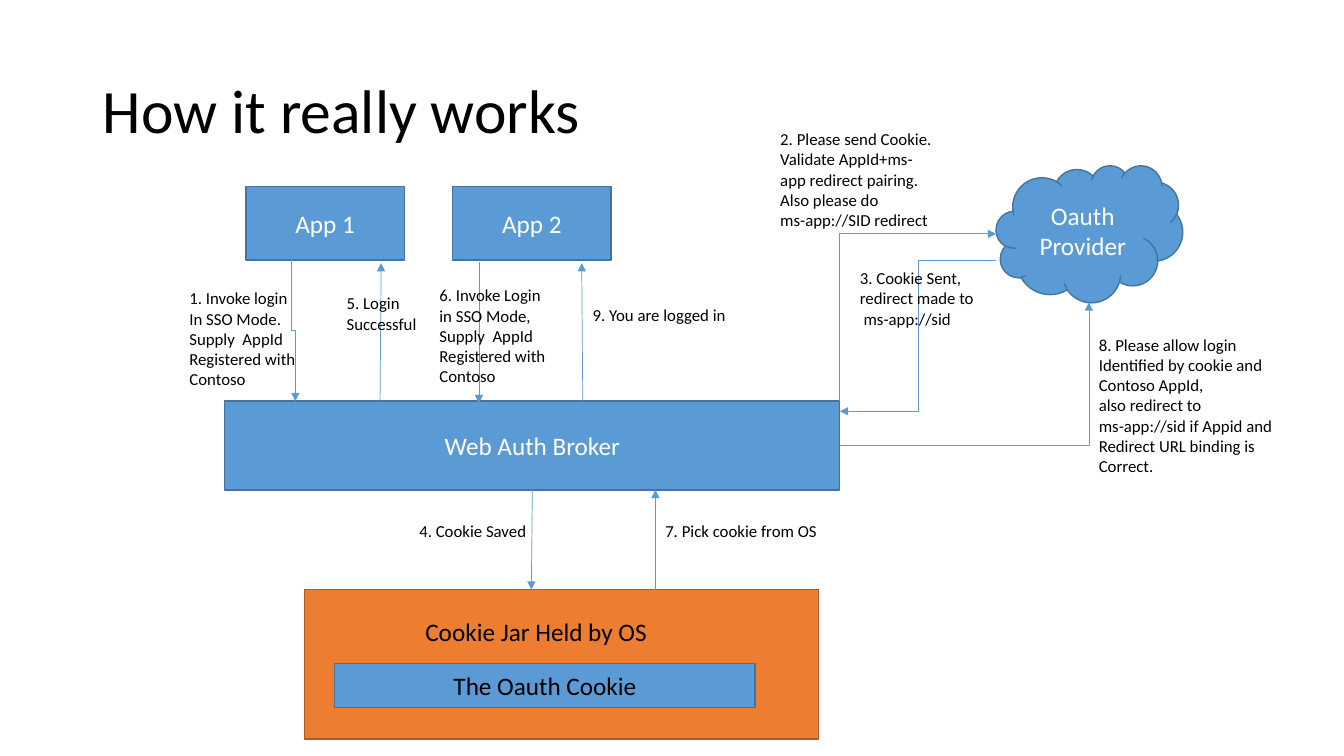
from pptx import Presentation
from pptx.dml.color import RGBColor
from pptx.enum.shapes import MSO_CONNECTOR, MSO_SHAPE
from pptx.enum.text import MSO_ANCHOR, MSO_AUTO_SIZE, PP_ALIGN
from pptx.oxml.ns import qn
from pptx.util import Inches, Pt
from lxml import etree

RECTANGLE, CLOUD = MSO_SHAPE.RECTANGLE, MSO_SHAPE.CLOUD
STRAIGHT, ELBOW = MSO_CONNECTOR.STRAIGHT, MSO_CONNECTOR.ELBOW
MIDDLE, TOP = MSO_ANCHOR.MIDDLE, MSO_ANCHOR.TOP
LEFT, CENTER = PP_ALIGN.LEFT, PP_ALIGN.CENTER
FIT_SHAPE, NO_FIT = MSO_AUTO_SIZE.SHAPE_TO_FIT_TEXT, MSO_AUTO_SIZE.NONE

BLACK = RGBColor(0x00, 0x00, 0x00)
WHITE = RGBColor(0xFF, 0xFF, 0xFF)
BLUE = RGBColor(0x5B, 0x9B, 0xD5)
DARK_BLUE = RGBColor(0x43, 0x73, 0x9E)
ORANGE = RGBColor(0xED, 0x7D, 0x31)
DARK_ORANGE = RGBColor(0xAF, 0x5C, 0x24)
FONT = "Calibri"

APP_TOP, APP_WIDTH, APP_HEIGHT = 1.85, 1.57, 0.73
BROKER_LEFT, BROKER_TOP, BROKER_WIDTH, BROKER_HEIGHT = 2.23, 3.98, 6.1, 0.88
BROKER_RIGHT = BROKER_LEFT + BROKER_WIDTH
BROKER_BOTTOM = BROKER_TOP + BROKER_HEIGHT
JAR_TOP = 5.85
CLOUD_LEFT, CLOUD_BOTTOM = 9.88, 3.0

STEPS = [
    (1.78, 2.81, 1.3, 1.11, False,
     "1. Invoke login\nIn SSO Mode.\nSupply  AppId\nRegistered with\nContoso"),
    (7.64, 1.23, 1.71, 1.11, True,
     "2. Please send Cookie. Validate AppId+ms-app redirect pairing. "
     "Also please do\nms-app://SID redirect"),
    (8.43, 2.61, 1.34, 0.71, False,
     "3. Cookie Sent,\nredirect made to\n ms-app://sid"),
    (4.06, 5.12, 1.28, 0.3, False, "4. Cookie Saved"),
    (3.34, 2.86, 0.9, 0.5, False, "5. Login\nSuccessful"),
    (4.26, 2.78, 1.3, 1.31, False,
     "6. Invoke Login\nin SSO Mode,\nSupply  AppId\nRegistered with\nContoso"),
    (6.5, 5.12, 1.73, 0.3, False, "7. Pick cookie from OS"),
    (10.8, 3.27, 1.94, 1.51, False,
     "8. Please allow login\nIdentified by cookie and\nContoso AppId,\n"
     "also redirect to\nms-app://sid if Appid and\nRedirect URL binding is\nCorrect."),
    (5.78, 2.97, 1.54, 0.3, False, "9. You are logged in"),
]

STRAIGHT_ARROWS = [
    ((4.75, 2.6), (4.75, 4.0)),
    ((5.28, BROKER_BOTTOM), (5.27, JAR_TOP)),
    ((3.77, BROKER_TOP), (3.78, 2.61)),
    ((6.5, JAR_TOP), (6.5, BROKER_BOTTOM)),
    ((5.78, BROKER_TOP), (5.77, 2.61)),
]


def write_text(shape, text, size=18, color=BLACK, align=LEFT, anchor=TOP,
               wrap=True, fit=NO_FIT, spacing=1.0):
    frame = shape.text_frame
    frame.text = text
    frame.word_wrap = wrap
    frame.auto_size = fit
    frame.vertical_anchor = anchor
    for paragraph in frame.paragraphs:
        paragraph.alignment = align
        paragraph.line_spacing = spacing
        paragraph.font.name = FONT
        paragraph.font.size = Pt(size)
        paragraph.font.color.rgb = color


def add_title(slide, text):
    title = slide.shapes.title
    title.left, title.top = Inches(0.92), Inches(0.4)
    title.width, title.height = Inches(11.5), Inches(1.45)
    write_text(title, text, size=44, anchor=MIDDLE, spacing=0.9)


def add_box(slide, left, top, width, height, text="", kind=RECTANGLE,
            fill=BLUE, line=DARK_BLUE, color=WHITE):
    shape = slide.shapes.add_shape(
        kind, Inches(left), Inches(top), Inches(width), Inches(height))
    shape.shadow.inherit = False
    shape.fill.solid()
    shape.fill.fore_color.rgb = fill
    shape.line.color.rgb = line
    shape.line.width = Pt(1)
    if text:
        write_text(shape, text, color=color, align=CENTER, anchor=MIDDLE)


def add_label(slide, left, top, width, height, text, size=12, wrap=False):
    label = slide.shapes.add_textbox(
        Inches(left), Inches(top), Inches(width), Inches(height))
    write_text(label, text, size=size, wrap=wrap, fit=FIT_SHAPE)


def add_arrow(slide, start, end, kind=STRAIGHT, arrow_end="tailEnd"):
    connector = slide.shapes.add_connector(
        kind, *(Inches(value) for value in (*start, *end)))
    connector.line.color.rgb = BLUE
    connector.line.width = Pt(0.5)
    properties = connector._element.spPr
    etree.SubElement(properties.find(qn("a:ln")), qn("a:" + arrow_end), type="triangle")
    etree.SubElement(properties, qn("a:effectLst"))
    return connector


def add_corner_arrow(slide, start, end, arrow_end="tailEnd"):
    connector = add_arrow(slide, start, end, ELBOW, arrow_end)
    connector._element.spPr.find(qn("a:prstGeom")).set("prst", "bentConnector2")


def add_vertical_elbow_arrow(slide, start, end):
    center_x, center_y = (start[0] + end[0]) / 2, (start[1] + end[1]) / 2
    half_x, half_y = (end[0] - start[0]) / 2, (end[1] - start[1]) / 2
    connector = add_arrow(slide, (center_x + half_y, center_y - half_x),
                          (center_x - half_y, center_y + half_x), ELBOW)
    connector._element.spPr.find(qn("a:xfrm")).set("rot", str(270 * 60000))


def main():
    presentation = Presentation()
    presentation.slide_width = Inches(13.33)
    presentation.slide_height = Inches(7.5)
    slide = presentation.slides.add_slide(presentation.slide_layouts[5])

    add_title(slide, "How it really works")
    add_box(slide, 3.02, JAR_TOP, 5.1, 1.48, fill=ORANGE, line=DARK_ORANGE)
    add_box(slide, 3.32, 6.58, 4.17, 0.44, "The Oauth Cookie", color=BLACK)
    add_label(slide, 4.12, 6.07, 2.59, 0.4, "Cookie Jar Held by OS", size=18, wrap=True)
    for left, name in ((2.44, "App 1"), (4.49, "App 2")):
        add_box(slide, left, APP_TOP, APP_WIDTH, APP_HEIGHT, name)
    add_box(slide, BROKER_LEFT, BROKER_TOP, BROKER_WIDTH, BROKER_HEIGHT, "Web Auth Broker")
    add_box(slide, CLOUD_LEFT, 1.64, 1.85, 1.36, "Oauth Provider", kind=CLOUD)

    for start, end in STRAIGHT_ARROWS:
        add_arrow(slide, start, end)
    add_vertical_elbow_arrow(slide, (2.89, 2.57), (2.93, BROKER_TOP))
    add_corner_arrow(slide, (CLOUD_LEFT, 2.32), (BROKER_RIGHT, BROKER_TOP), "headEnd")
    add_arrow(slide, (CLOUD_LEFT, 2.58), (BROKER_RIGHT, 4.08), ELBOW)
    add_corner_arrow(slide, (BROKER_RIGHT, 4.42), (10.8, CLOUD_BOTTOM))

    for left, top, width, height, wrap, text in STEPS:
        add_label(slide, left, top, width, height, text, wrap=wrap)

    presentation.save("out.pptx")


if __name__ == "__main__":
    main()
